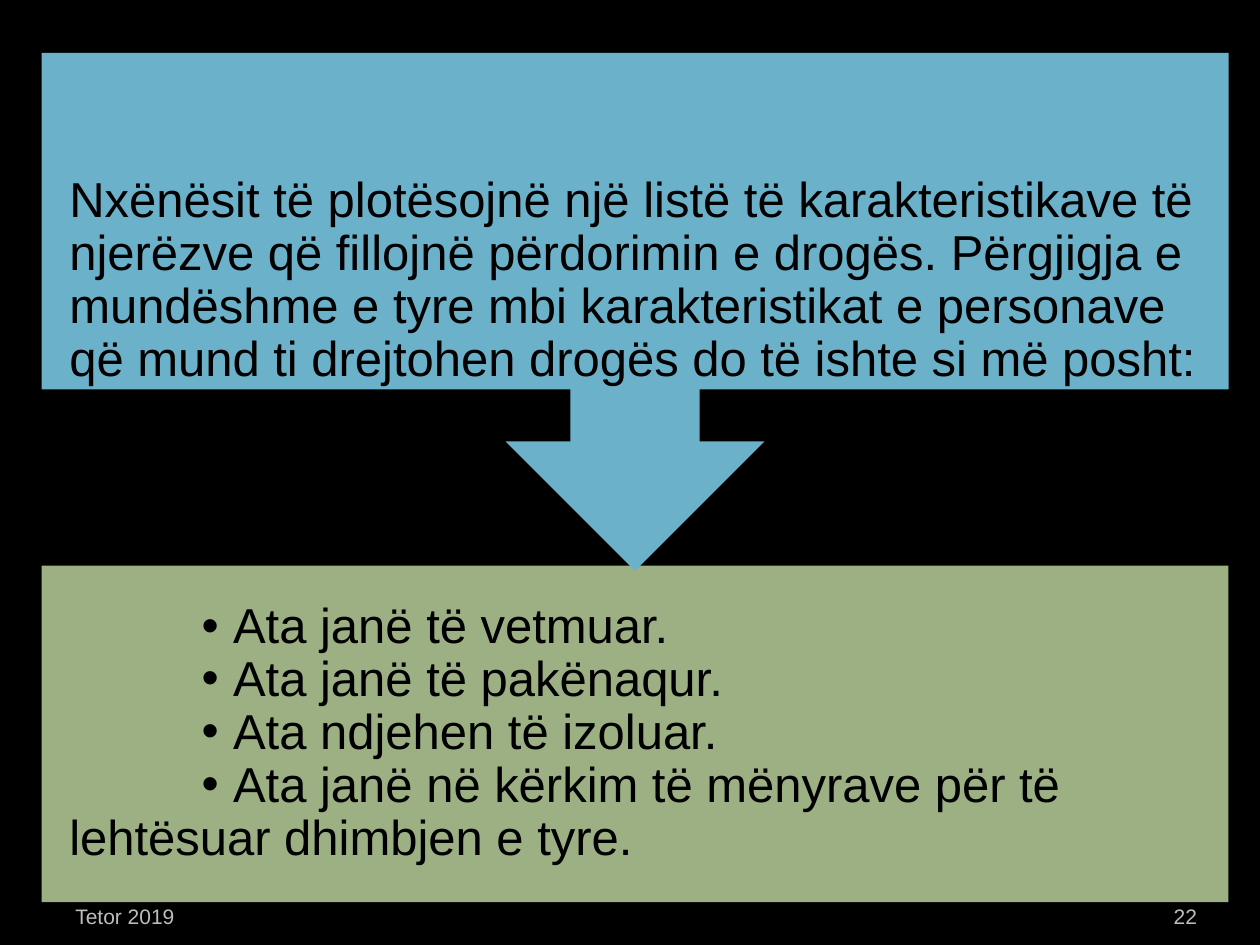
from lxml import etree
from pptx import Presentation
from pptx.dml.color import RGBColor
from pptx.enum.shapes import MSO_SHAPE as Kind
from pptx.enum.text import MSO_ANCHOR as Anchor, PP_ALIGN as Align
from pptx.oxml.ns import qn
from pptx.util import Inches, Pt

COLORS = {"back": "000000", "text": "000000", "blue": "6BB1C9",
          "green": "9CB084", "foot": "BDBDBD"}

prs = Presentation()
prs.slide_width, prs.slide_height = Inches(10), Inches(7.5)
slide = prs.slides.add_slide(prs.slide_layouts[6])
slide.background.fill.solid()
slide.background.fill.fore_color.rgb = RGBColor.from_string(COLORS["back"])


def write(para, text, size, color, align=Align.LEFT):
    """Add one styled run to a paragraph."""
    para.alignment = align
    run = para.add_run()
    run.text = text
    run.font.name, run.font.size = "Arial", Pt(size)
    run.font.color.rgb = RGBColor.from_string(COLORS[color])


def panel(kind, top, height, color, anchor, pad):
    """Add a full-width filled shape and return its text frame."""
    shape = slide.shapes.add_shape(
        kind, Inches(0.33), Inches(top), Inches(9.42), Inches(height))
    shape.shadow.inherit = False
    shape.fill.solid()
    shape.fill.fore_color.rgb = RGBColor.from_string(COLORS[color])
    shape.line.fill.background()
    frame = shape.text_frame
    frame.word_wrap, frame.vertical_anchor = True, anchor
    frame.margin_left = frame.margin_right = Inches(0.22)
    frame.margin_top = frame.margin_bottom = Inches(pad)
    return frame


# Footer
for text, left, width, pad, align in [
        ("Tetor 2019", 0.5, 2.33, 0.1, Align.LEFT),
        ("22", 8.67, 0.83, 0, Align.RIGHT)]:
    box = slide.shapes.add_textbox(
        Inches(left), Inches(7.02), Inches(width), Inches(0.4))
    frame = box.text_frame
    frame.word_wrap, frame.vertical_anchor = True, Anchor.BOTTOM
    frame.margin_left = frame.margin_right = Inches(pad)
    write(frame.paragraphs[0], text, 12, "foot", align)

# Answers
frame = panel(Kind.RECTANGLE, 4.49, 2.67, "green", Anchor.MIDDLE, 0.22)
answers = [
    ("Ata janë të vetmuar.", True),
    ("Ata janë të pakënaqur.", True),
    ("Ata ndjehen të izoluar.", True),
    ("Ata janë në kërkim të mënyrave për të", True),
    ("lehtësuar dhimbjen e tyre.", False),
]
for i, (text, dot) in enumerate(answers):
    para = frame.add_paragraph() if i else frame.paragraphs[0]
    para.line_spacing = 0.9
    write(para, text, 28, "text")
    if dot:
        props = para._p.get_or_add_pPr()
        props.set("marL", str(Inches(1.3)))
        props.set("indent", str(Inches(-0.25)))
        etree.SubElement(props, qn("a:buFont")).set("typeface", "Arial")
        etree.SubElement(props, qn("a:buChar")).set("char", "•")

# Task
frame = panel(Kind.DOWN_ARROW_CALLOUT, 0.42, 4.11, "blue", Anchor.BOTTOM, 0.02)
para = frame.paragraphs[0]
para.line_spacing = 0.9
write(para, "Nxënësit të plotësojnë një listë të karakteristikave të njerëzve "
      "që fillojnë përdorimin e drogës. Përgjigja e mundëshme e tyre mbi "
      "karakteristikat e personave që mund ti drejtohen drogës do të ishte "
      "si më posht:", 28, "text")

prs.save("out.pptx")
